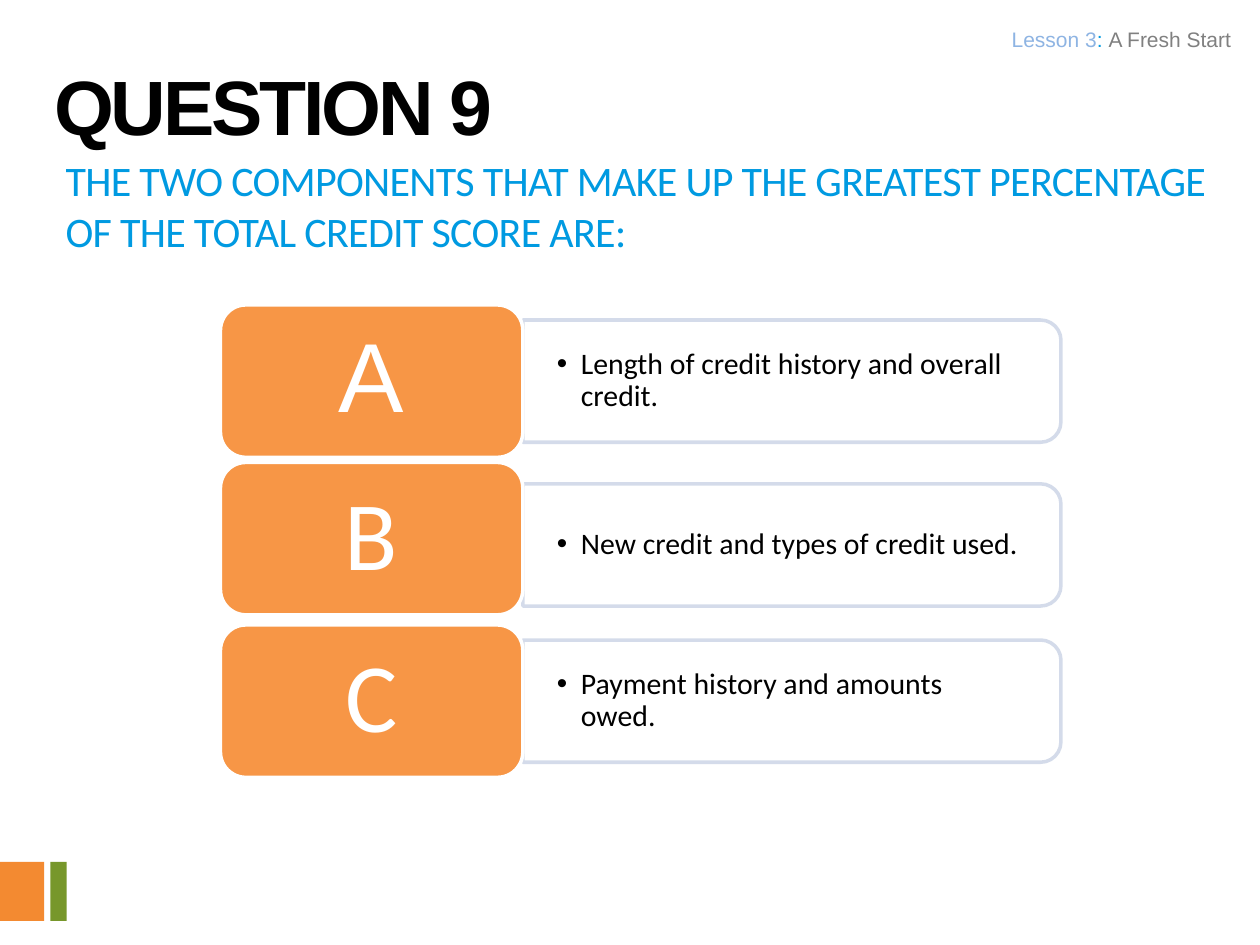
from typing import NamedTuple

from lxml.etree import SubElement
from pptx import Presentation
from pptx.dml.color import RGBColor
from pptx.enum.shapes import MSO_SHAPE
from pptx.enum.text import MSO_ANCHOR, MSO_AUTO_SIZE, PP_ALIGN
from pptx.oxml.ns import qn
from pptx.util import Inches, Pt

COLORS = {
    "title": "000000", "text": "000000", "question": "009AE1",
    "lesson": "8EB4E3", "topic": "808080", "white": "FFFFFF",
    "card": "F79646", "panel_line": "D0D8E8",
    "orange": "F38A31", "green": "77972B",
}
CARD_X, CARD_W, CARD_H = 1.75, 2.4, 1.21
PANEL_W, PANEL_H = 4.27, 0.97
PANEL_X = CARD_X + CARD_W


class Option(NamedTuple):
    letter: str
    text: str
    card_y: float
    panel_y: float
    letter_font: str = "Calibri"


OPTIONS = [
    Option("A", "Length of credit history and overall credit.", 2.42, 2.54, "Arial"),
    Option("B", "New credit and types of credit used.", 3.67, 3.84),
    Option("C", "Payment history and amounts owed.", 4.96, 5.08),
]


def rgb(name: str) -> RGBColor:
    return RGBColor.from_string(COLORS[name])


def style(r, font: str, size: float, color: str, bold=False, spc=0) -> None:
    r.font.name, r.font.size, r.font.bold = font, Pt(size), bold
    r.font.color.rgb = rgb(color)
    if spc:
        r.font._element.set("spc", str(round(spc * 100)))


def place(sp, x: float, y: float, w: float, h: float) -> None:
    sp.left, sp.top, sp.width, sp.height = map(Inches, (x, y, w, h))


def set_insets(tf, x: float, y: float) -> None:
    tf.margin_left = tf.margin_right = Inches(x)
    tf.margin_top = tf.margin_bottom = Inches(y)
    tf.word_wrap = True


def add_box(s, kind, x: float, y: float, w: float, h: float, fill: str, line=""):
    sp = s.shapes.add_shape(kind, *map(Inches, (x, y, w, h)))
    sp.shadow.inherit = False
    sp.fill.solid()
    sp.fill.fore_color.rgb = rgb(fill)
    if line:
        sp.line.color.rgb = rgb(line)
        sp.line.width = Pt(2)
    else:
        sp.line.fill.background()
    return sp


def fill_placeholder(sp, text: str, box: tuple, **font):
    place(sp, *box)
    tf = sp.text_frame
    tf.text = text
    tf.auto_size = MSO_AUTO_SIZE.NONE
    tf.vertical_anchor = MSO_ANCHOR.TOP
    p = tf.paragraphs[0]
    p.alignment = PP_ALIGN.LEFT
    p.space_before = Pt(0)
    style(p.runs[0], **font)
    return p


def add_panel(s, o: Option) -> None:
    # Upright shape turned a quarter, so its rounded end faces right
    cx, cy = PANEL_X + PANEL_W / 2, o.panel_y + PANEL_H / 2
    sp = add_box(s, MSO_SHAPE.ROUND_2_SAME_RECTANGLE, cx - PANEL_H / 2,
                 cy - PANEL_W / 2, PANEL_H, PANEL_W, "white", "panel_line")
    sp.rotation = 90
    for clr in sp._element.spPr.iter(qn("a:srgbClr")):
        SubElement(clr, qn("a:alpha"), val="90000")

    tb = s.shapes.add_textbox(*map(Inches, (PANEL_X, o.panel_y + 0.05, 4.22, 0.87)))
    tf = tb.text_frame
    set_insets(tf, 0.27, 0.14)
    tf.vertical_anchor = MSO_ANCHOR.MIDDLE
    tf.text = o.text
    p = tf.paragraphs[0]
    p.level = 1
    p.line_spacing = 0.9
    pPr = p._p.get_or_add_pPr()
    pPr.set("marL", str(Inches(0.19)))
    pPr.set("indent", str(Inches(-0.19)))
    SubElement(pPr, qn("a:buFont"), typeface="Arial")
    SubElement(pPr, qn("a:buChar"), char="•")
    style(p.runs[0], "Calibri", 17, "text")


def add_card(s, o: Option) -> None:
    sp = add_box(s, MSO_SHAPE.ROUNDED_RECTANGLE, CARD_X, o.card_y,
                 CARD_W, CARD_H, "card", "white")
    tf = sp.text_frame
    set_insets(tf, 0.23, 0.12)
    tf.vertical_anchor = MSO_ANCHOR.MIDDLE
    tf.text = o.letter
    p = tf.paragraphs[0]
    p.alignment = PP_ALIGN.CENTER
    p.line_spacing = 0.9
    style(p.runs[0], o.letter_font, 56, "white")


def add_header(s) -> None:
    tb = s.shapes.add_textbox(*map(Inches, (4, 0.17, 5.85, 0.32)))
    set_insets(tb.text_frame, 0.08, 0.04)
    p = tb.text_frame.paragraphs[0]
    p.alignment = PP_ALIGN.RIGHT
    for text, color in (("Lesson 3", "lesson"), (": ", "question"),
                        ("A Fresh Start", "topic")):
        r = p.add_run()
        r.text = text
        style(r, "Arial", 12, color)


def main() -> None:
    prs = Presentation()
    prs.slide_width, prs.slide_height = Inches(10), Inches(7.5)
    s = prs.slides.add_slide(prs.slide_layouts[1])

    # Corner blocks
    for x, w, color in ((0, 0.35, "orange"), (0.4, 0.13, "green")):
        add_box(s, MSO_SHAPE.RECTANGLE, x, 6.84, w, 0.47, color)

    # Title and question
    p = fill_placeholder(s.shapes.title, "QUESTION 9", (0.33, 0.33, 8.66, 0.83),
                         font="Arial", size=44, color="title", bold=True, spc=-1.8)
    p.line_spacing = Pt(59)
    p = fill_placeholder(
        s.placeholders[1],
        "THE TWO COMPONENTS THAT MAKE UP THE GREATEST PERCENTAGE "
        "OF THE TOTAL CREDIT SCORE ARE:",
        (0.42, 1.18, 9.5, 1), font="Calibri", size=24, color="question", spc=-0.4)
    pPr = p._p.get_or_add_pPr()
    pPr.set("marL", "0")
    pPr.set("indent", "0")
    SubElement(pPr, qn("a:buNone"))

    # Answer options
    for o in OPTIONS:
        add_panel(s, o)
        add_card(s, o)

    add_header(s)
    prs.save("out.pptx")


if __name__ == "__main__":
    main()
